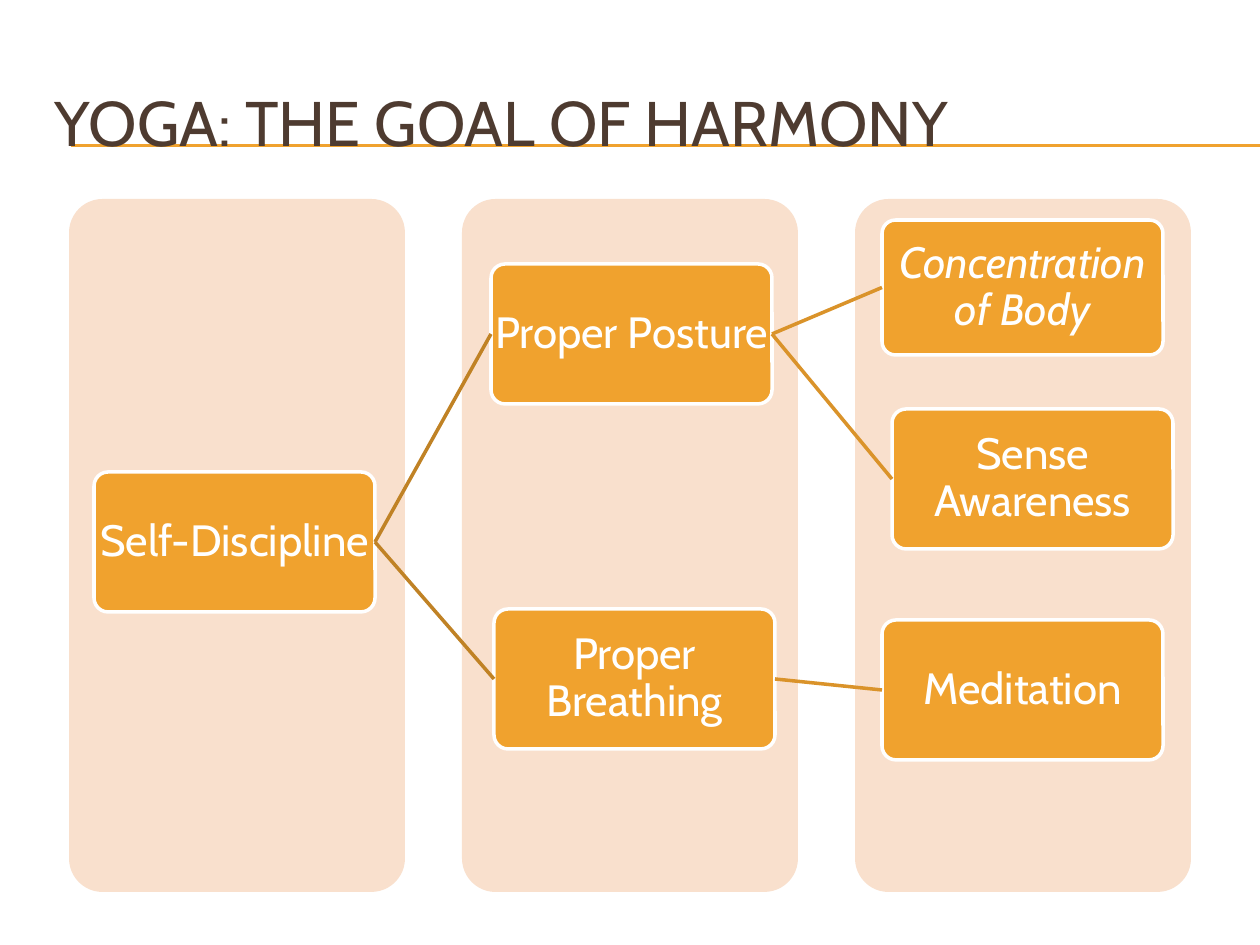
import dataclasses

import lxml.etree
import pptx
import pptx.dml.color
import pptx.enum.shapes
import pptx.enum.text
import pptx.oxml.ns
import pptx.shapes.autoshape
import pptx.shapes.connector
import pptx.slide
import pptx.util

RGBColor = pptx.dml.color.RGBColor
PIXELS_PER_INCH = 126
FONT = "Cabin"
BROWN = RGBColor(0x4E, 0x3B, 0x30)
ORANGE = RGBColor(0xF0, 0xA2, 0x2E)
PEACH = RGBColor(0xF9, 0xE0, 0xCD)
WHITE = RGBColor(0xFF, 0xFF, 0xFF)
FIRST_LINK = RGBColor(0xC0, 0x82, 0x25)
SECOND_LINK = RGBColor(0xDA, 0x93, 0x2A)

PANEL_LEFT, PANEL_TOP, PANEL_WIDTH, PANEL_HEIGHT = 69, 199, 336, 693
PANEL_STEP = 393
NODE_WIDTH = 281
RIGHT_SITE, LEFT_SITE = 3, 1


@dataclasses.dataclass(frozen=True)
class Node:
    text: str
    left: int
    top: int
    height: int = 140
    italic: bool = False
    wraps: bool = True


@dataclasses.dataclass(frozen=True)
class Link:
    parent: str
    child: str
    color: RGBColor


NODES = [
    Node("Self-Discipline", 94, 472, wraps=False),
    Node("Proper Posture", 491, 264, wraps=False),
    Node("Proper Breathing", 494, 609),
    Node("Concentration of Body", 882, 220, height=135, italic=True),
    Node("Sense Awareness", 892, 409),
    Node("Meditation", 882, 620),
]
LINKS = [
    Link("Self-Discipline", "Proper Posture", FIRST_LINK),
    Link("Self-Discipline", "Proper Breathing", FIRST_LINK),
    Link("Proper Posture", "Concentration of Body", SECOND_LINK),
    Link("Proper Posture", "Sense Awareness", SECOND_LINK),
    Link("Proper Breathing", "Meditation", SECOND_LINK),
]


def px(length: int) -> int:
    return pptx.util.Inches(length / PIXELS_PER_INCH)


def add_line(slide: pptx.slide.Slide, start: tuple[int, int], end: tuple[int, int],
             color: RGBColor, width: float) -> pptx.shapes.connector.Connector:
    line = slide.shapes.add_connector(
        pptx.enum.shapes.MSO_CONNECTOR.STRAIGHT,
        px(start[0]), px(start[1]), px(end[0]), px(end[1]))
    line.line.color.rgb = color
    line.line.width = pptx.util.Pt(width)
    lxml.etree.SubElement(line.element.spPr, pptx.oxml.ns.qn("a:effectLst"))
    return line


def add_rounded_box(slide: pptx.slide.Slide, left: int, top: int, width: int,
                    height: int, fill: RGBColor) -> pptx.shapes.autoshape.Shape:
    box = slide.shapes.add_shape(
        pptx.enum.shapes.MSO_SHAPE.ROUNDED_RECTANGLE,
        px(left), px(top), px(width), px(height))
    box.adjustments[0] = 0.1
    box.shadow.inherit = False
    box.fill.solid()
    box.fill.fore_color.rgb = fill
    box.line.fill.background()
    return box


def add_node(slide: pptx.slide.Slide, node: Node) -> pptx.shapes.autoshape.Shape:
    box = add_rounded_box(slide, node.left, node.top, NODE_WIDTH, node.height, ORANGE)
    box.line.color.rgb = WHITE
    box.line.width = pptx.util.Pt(2)
    frame = box.text_frame
    frame.word_wrap = node.wraps
    frame.vertical_anchor = pptx.enum.text.MSO_ANCHOR.MIDDLE
    frame.margin_left = frame.margin_right = px(2)
    frame.margin_top = frame.margin_bottom = px(2)
    frame.text = node.text
    paragraph = frame.paragraphs[0]
    paragraph.alignment = pptx.enum.text.PP_ALIGN.CENTER
    paragraph.line_spacing = 0.9
    style_font(paragraph, 25, WHITE)
    paragraph.font.italic = node.italic
    return box


def style_font(paragraph, size: int, color: RGBColor) -> None:
    paragraph.font.name = FONT
    paragraph.font.size = pptx.util.Pt(size)
    paragraph.font.color.rgb = color


def set_title(slide: pptx.slide.Slide, text: str) -> None:
    """Fill the title placeholder and bring it in front of the rules."""
    title = slide.shapes.title
    title.left, title.top = px(42), px(63)
    title.width, title.height = px(1197), px(116)
    title.text_frame.text = text
    title.text_frame.vertical_anchor = pptx.enum.text.MSO_ANCHOR.MIDDLE
    paragraph = title.text_frame.paragraphs[0]
    paragraph.alignment = pptx.enum.text.PP_ALIGN.LEFT
    style_font(paragraph, 36, BROWN)
    slide.shapes.element.append(title.element)


def main() -> None:
    presentation = pptx.Presentation()
    presentation.slide_width = px(1260)
    presentation.slide_height = px(945)
    slide = presentation.slides.add_slide(presentation.slide_layouts.get_by_name("Title Only"))

    for top in (145, 146):
        add_line(slide, (71, top), (1260, top), ORANGE, 0.75)
    set_title(slide, "YOGA: THE GOAL OF HARMONY")

    for column in range(3):
        add_rounded_box(slide, PANEL_LEFT + column * PANEL_STEP, PANEL_TOP,
                        PANEL_WIDTH, PANEL_HEIGHT, PEACH)

    boxes = {node.text: add_node(slide, node) for node in NODES}
    for link in LINKS:
        connector = add_line(slide, (0, 0), (0, 0), link.color, 2)
        connector.begin_connect(boxes[link.parent], RIGHT_SITE)
        connector.end_connect(boxes[link.child], LEFT_SITE)

    presentation.save("out.pptx")


if __name__ == "__main__":
    main()
